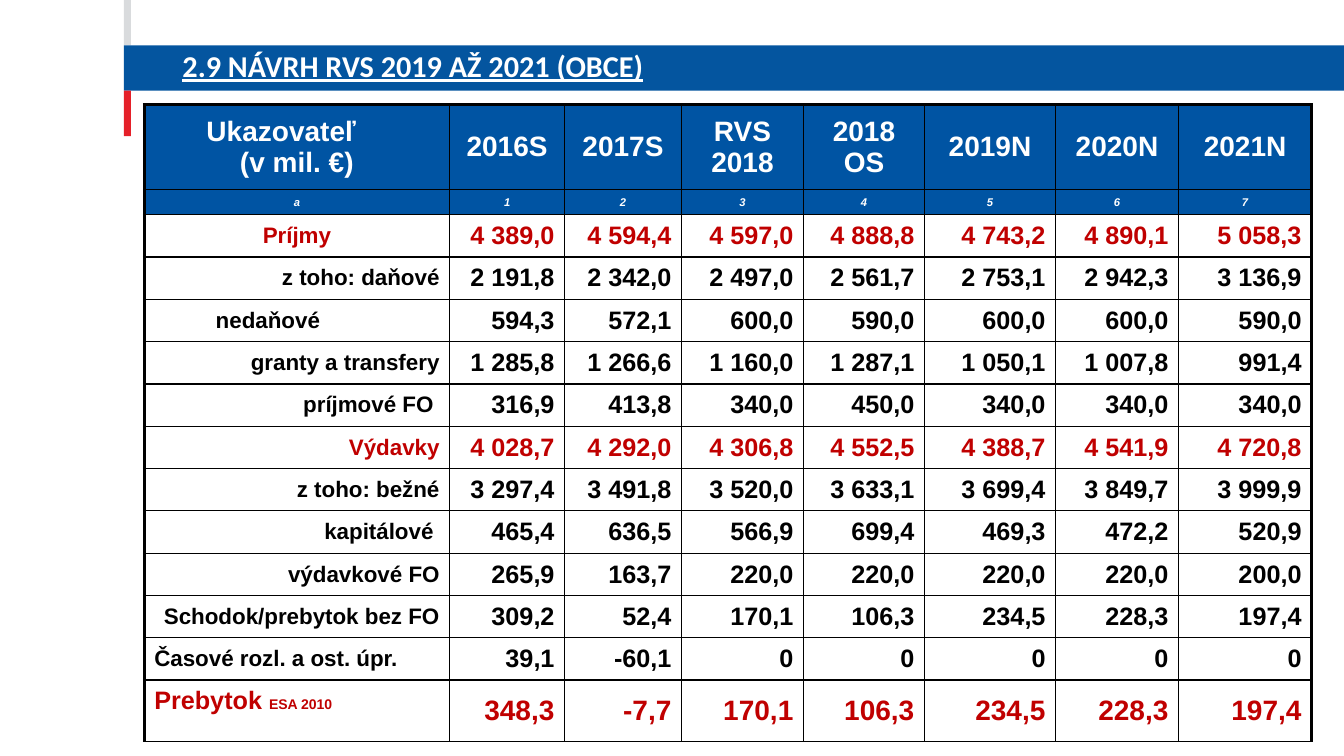
from dataclasses import dataclass
from lxml import etree
from pptx import Presentation
from pptx.dml.color import RGBColor
from pptx.enum.shapes import MSO_SHAPE
from pptx.enum.text import MSO_ANCHOR, PP_ALIGN
from pptx.oxml.ns import qn
from pptx.util import Inches, Pt

RECTANGLE = MSO_SHAPE.RECTANGLE
MIDDLE = MSO_ANCHOR.MIDDLE
LEFT, CENTER, RIGHT = PP_ALIGN.LEFT, PP_ALIGN.CENTER, PP_ALIGN.RIGHT


@dataclass(frozen=True)
class Theme:
    band: str = "04559F"
    header: str = "0054A3"
    accent: str = "E52029"
    grey: str = "D9DBDD"
    strong: str = "C00000"
    black: str = "000000"
    white: str = "FFFFFF"
    title_font: str = "Calibri"
    table_font: str = "Arial"
    title_size: float = 21.6
    header_size: float = 20
    index_size: float = 8
    label_size: float = 16
    value_size: float = 18
    total_size: float = 20
    note_size: float = 10
    thin: float = 1
    thick: float = 2.25


THEME = Theme()
TITLE = "2.9 NÁVRH RVS 2019 AŽ 2021 (OBCE)"
HEADINGS = ["Ukazovateľ\n(v mil. €)", "2016S", "2017S", "RVS 2018", "2018 OS", "2019N", "2020N", "2021N"]
INDEXES = ["a", "1", "2", "3", "4", "5", "6", "7"]
INDICATORS = [
    ("Príjmy", ["4 389,0", "4 594,4", "4 597,0", "4 888,8", "4 743,2", "4 890,1", "5 058,3"]),
    ("z toho: daňové", ["2 191,8", "2 342,0", "2 497,0", "2 561,7", "2 753,1", "2 942,3", "3 136,9"]),
    ("nedaňové", ["594,3", "572,1", "600,0", "590,0", "600,0", "600,0", "590,0"]),
    ("granty a transfery", ["1 285,8", "1 266,6", "1 160,0", "1 287,1", "1 050,1", "1 007,8", "991,4"]),
    ("príjmové FO", ["316,9", "413,8", "340,0", "450,0", "340,0", "340,0", "340,0"]),
    ("Výdavky", ["4 028,7", "4 292,0", "4 306,8", "4 552,5", "4 388,7", "4 541,9", "4 720,8"]),
    ("z toho: bežné", ["3 297,4", "3 491,8", "3 520,0", "3 633,1", "3 699,4", "3 849,7", "3 999,9"]),
    ("kapitálové", ["465,4", "636,5", "566,9", "699,4", "469,3", "472,2", "520,9"]),
    ("výdavkové FO", ["265,9", "163,7", "220,0", "220,0", "220,0", "220,0", "200,0"]),
    ("Schodok/prebytok bez FO", ["309,2", "52,4", "170,1", "106,3", "234,5", "228,3", "197,4"]),
    ("Časové rozl. a ost. úpr.", ["39,1", "-60,1", "0", "0", "0", "0", "0"]),
    ("Prebytok ", ["348,3", "-7,7", "170,1", "106,3", "234,5", "228,3", "197,4"]),
]
TOTAL_NOTE = "ESA 2010"
TOTAL_LABEL = INDICATORS[-1][0]
STRONG_LABELS = {"Príjmy", "Výdavky", TOTAL_LABEL}
LABEL_ALIGNMENTS = {"Príjmy": CENTER, "nedaňové": LEFT, "Časové rozl. a ost. úpr.": LEFT, TOTAL_LABEL: LEFT}
HEADING_SHIFT = 0.31
LABEL_INSETS = {
    HEADINGS[0]: {"right": 0.1 + HEADING_SHIFT},
    "nedaňové": {"left": 0.71},
    "príjmové FO": {"right": 0.16},
    "kapitálové": {"right": 0.16},
    TOTAL_LABEL: {"bottom": 0.25},
}

SLIDE_WIDTH, SLIDE_HEIGHT = 13.33, 7.5
BAND_LEFT, BAND_HEIGHT, MARK_WIDTH = 1.23, 0.45, 0.07
BARS = [
    (0, MARK_WIDTH, THEME.grey),
    (1, SLIDE_WIDTH - BAND_LEFT, THEME.band),
    (2, MARK_WIDTH, THEME.accent),
]
TITLE_BOX = (1.71, BAND_HEIGHT, 11.01, 0.44)
TABLE_LEFT, TABLE_TOP = 1.43, 1.04
COLUMNS = [3.03, 1.14, 1.16, 1.21, 1.2, 1.3, 1.22, 1.32]
ROWS = [0.84, 0.25] + [0.42] * (len(INDICATORS) - 1) + [0.61]


def color(value):
    return RGBColor.from_string(value)


def set_font(font, name, size, value):
    font.name, font.size, font.bold = name, Pt(size), True
    font.color.rgb = color(value)


def set_borders(cell, widths):
    properties = cell._tc.get_or_add_tcPr()
    for position, (side, width) in enumerate(widths.items()):
        line = etree.Element(qn(f"a:ln{side}"), w=str(Pt(width)))
        fill = etree.SubElement(line, qn("a:solidFill"))
        etree.SubElement(fill, qn("a:srgbClr"), val=THEME.black)
        properties.insert(position, line)


def format_cell(cell, text, alignment, size, value, fill=None):
    insets = {"left": 0.1, "top": 0.05, "right": 0.1, "bottom": 0.05, **LABEL_INSETS.get(text, {})}
    for side, inset in insets.items():
        setattr(cell, f"margin_{side}", Inches(inset))
    cell.vertical_anchor = MIDDLE
    if fill:
        cell.fill.solid()
        cell.fill.fore_color.rgb = color(fill)
    else:
        cell.fill.background()
    cell.text = text
    for paragraph in cell.text_frame.paragraphs:
        paragraph.alignment = alignment
        set_font(paragraph.font, THEME.table_font, size, value)


def add_bars(slide):
    for row, width, fill in BARS:
        bar = slide.shapes.add_shape(
            RECTANGLE, Inches(BAND_LEFT), Inches(row * BAND_HEIGHT), Inches(width), Inches(BAND_HEIGHT)
        )
        bar.shadow.inherit = False
        bar.fill.solid()
        bar.fill.fore_color.rgb = color(fill)
        bar.line.fill.background()
        slide.shapes.title._element.addprevious(bar._element)


def format_title(title):
    title.left, title.top, title.width, title.height = map(Inches, TITLE_BOX)
    title.text_frame.text = TITLE
    title.text_frame.vertical_anchor = MIDDLE
    paragraph = title.text_frame.paragraphs[0]
    paragraph.alignment = LEFT
    paragraph.line_spacing = 0.9
    set_font(paragraph.font, THEME.title_font, THEME.title_size, THEME.white)
    paragraph.font.underline = True


def add_budget_table(slide):
    frame = slide.shapes.add_table(
        len(ROWS), len(COLUMNS), Inches(TABLE_LEFT), Inches(TABLE_TOP), Inches(sum(COLUMNS)), Inches(sum(ROWS))
    )
    table = frame.table
    table.first_row = table.horz_banding = False
    for column, width in zip(table.columns, COLUMNS):
        column.width = Inches(width)
    for row, height in zip(table.rows, ROWS):
        row.height = Inches(height)

    for column, (heading, index) in enumerate(zip(HEADINGS, INDEXES)):
        format_cell(table.cell(0, column), heading, CENTER, THEME.header_size, THEME.white, THEME.header)
        cell = table.cell(1, column)
        format_cell(cell, index, CENTER, THEME.index_size, THEME.white, THEME.header)
        cell.text_frame.paragraphs[0].font.italic = True
    unit = table.cell(0, 0).text_frame.paragraphs[1]
    unit._p.get_or_add_pPr().set("marL", str(Inches(HEADING_SHIFT)))

    for row, (label, values) in enumerate(INDICATORS, start=2):
        is_total = label == TOTAL_LABEL
        value_color = THEME.strong if label in STRONG_LABELS else THEME.black
        label_size = THEME.value_size if is_total else THEME.label_size
        value_size = THEME.total_size if is_total else THEME.value_size
        format_cell(table.cell(row, 0), label, LABEL_ALIGNMENTS.get(label, RIGHT), label_size, value_color)
        for column, value in enumerate(values, start=1):
            format_cell(table.cell(row, column), value, RIGHT, value_size, value_color)
    note = table.cell(len(ROWS) - 1, 0).text_frame.paragraphs[0].add_run()
    note.text = TOTAL_NOTE
    note.font.size = Pt(THEME.note_size)

    for row in range(len(ROWS)):
        for column in range(len(COLUMNS)):
            set_borders(table.cell(row, column), {
                "L": THEME.thick if column == 0 else THEME.thin,
                "R": THEME.thick if column == len(COLUMNS) - 1 else THEME.thin,
                "T": THEME.thick if row == 0 else THEME.thin,
                "B": THEME.thin,
            })


def main():
    presentation = Presentation()
    presentation.slide_width = Inches(SLIDE_WIDTH)
    presentation.slide_height = Inches(SLIDE_HEIGHT)
    slide = presentation.slides.add_slide(presentation.slide_layouts[5])
    add_bars(slide)
    format_title(slide.shapes.title)
    add_budget_table(slide)
    presentation.save("out.pptx")


if __name__ == "__main__":
    main()
